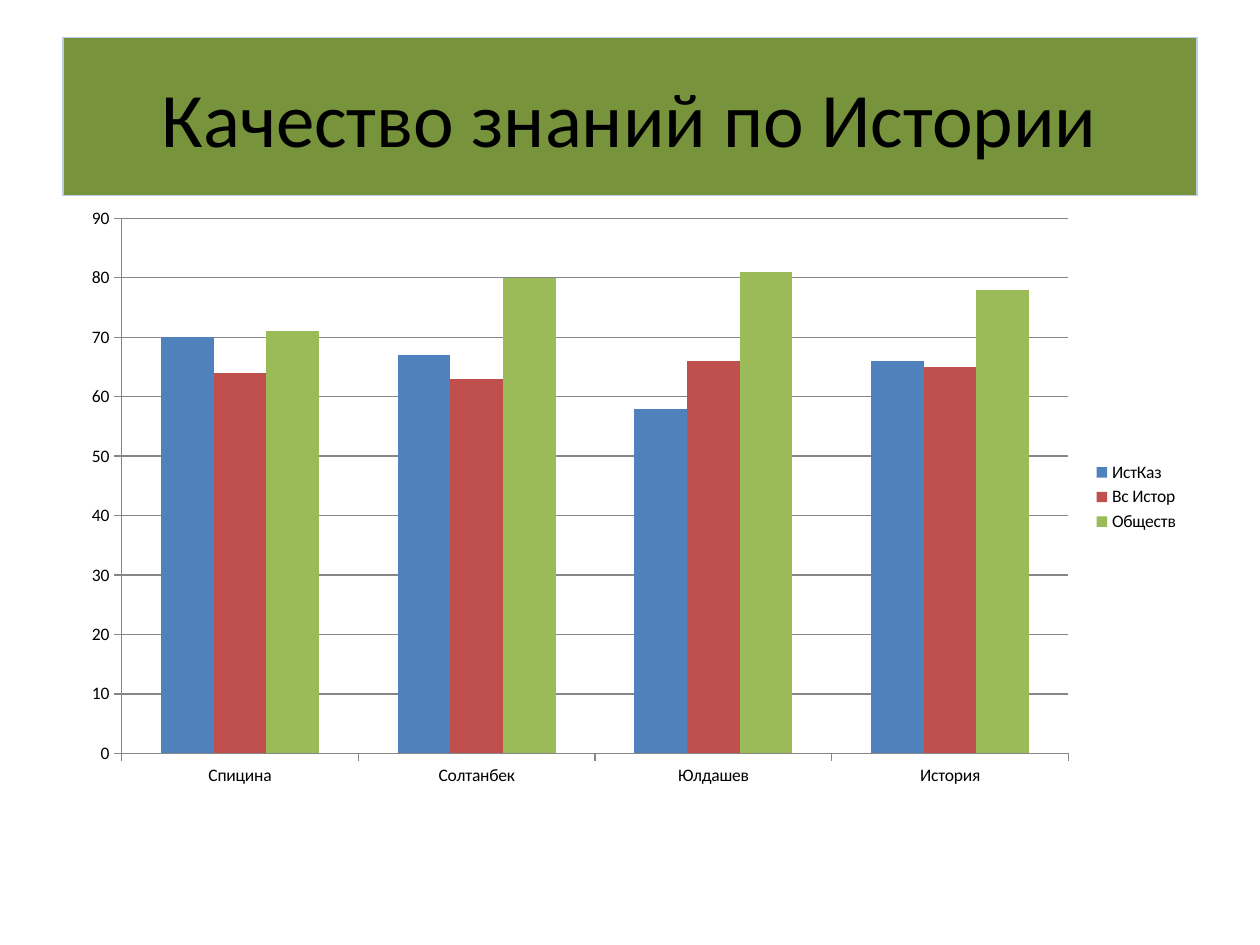
from dataclasses import dataclass

from pptx import Presentation
from pptx.chart.data import CategoryChartData
from pptx.dml.color import RGBColor
from pptx.enum.chart import XL_CHART_TYPE, XL_LEGEND_POSITION, XL_TICK_MARK
from pptx.enum.text import MSO_ANCHOR, PP_ALIGN
from pptx.slide import Slide
from pptx.util import Cm, Pt


@dataclass(frozen=True)
class Theme:
    font: str = "Calibri"
    title_size: Pt = Pt(44)
    chart_size: Pt = Pt(10)
    line_width: Pt = Pt(0.75)
    text: RGBColor = RGBColor(0x00, 0x00, 0x00)
    banner: RGBColor = RGBColor(0x77, 0x93, 0x3C)
    banner_edge: RGBColor = RGBColor(0xB9, 0xCD, 0xE5)
    axis: RGBColor = RGBColor(0x86, 0x86, 0x86)


@dataclass(frozen=True)
class Subject:
    name: str
    scores: tuple[int, ...]
    color: RGBColor


THEME = Theme()
TEACHERS = ("Cпицина", "Солтанбек", "Юлдашев", "История")
SUBJECTS = (
    Subject("ИстКаз", (70, 67, 58, 66), RGBColor(0x4F, 0x81, 0xBD)),
    Subject("Вс Истор", (64, 63, 66, 65), RGBColor(0xC0, 0x50, 0x4D)),
    Subject("Обществ", (71, 80, 81, 78), RGBColor(0x9B, 0xBB, 0x59)),
)


def style_font(font, size: Pt) -> None:
    font.name = THEME.font
    font.size = size
    font.bold = False
    font.color.rgb = THEME.text


def style_line(line, color: RGBColor) -> None:
    line.color.rgb = color
    line.width = THEME.line_width


def fill_banner(slide: Slide, heading: str) -> None:
    banner = slide.shapes.title
    banner.left, banner.top = Cm(1.27), Cm(0.76)
    banner.width, banner.height = Cm(22.86), Cm(3.18)
    banner.fill.solid()
    banner.fill.fore_color.rgb = THEME.banner
    style_line(banner.line, THEME.banner_edge)
    banner.text_frame.text = heading
    banner.text_frame.vertical_anchor = MSO_ANCHOR.MIDDLE
    paragraph = banner.text_frame.paragraphs[0]
    paragraph.alignment = PP_ALIGN.CENTER
    style_font(paragraph.font, THEME.title_size)


def add_scores_chart(slide: Slide, subjects: tuple[Subject, ...]) -> None:
    scores = CategoryChartData()
    scores.categories = TEACHERS
    for subject in subjects:
        scores.add_series(subject.name, subject.scores)
    chart = slide.shapes.add_chart(
        XL_CHART_TYPE.COLUMN_CLUSTERED,
        Cm(1.4), Cm(3.96), Cm(22.63), Cm(12.12), scores,
    ).chart
    style_font(chart.font, THEME.chart_size)
    chart.has_title = False
    chart.has_legend = True
    chart.legend.position = XL_LEGEND_POSITION.RIGHT
    chart.legend.include_in_layout = False

    for axis in (chart.category_axis, chart.value_axis):
        axis.major_tick_mark = XL_TICK_MARK.OUTSIDE
        axis.minor_tick_mark = XL_TICK_MARK.NONE
        style_line(axis.format.line, THEME.axis)
    score_axis = chart.value_axis
    score_axis.minimum_scale, score_axis.maximum_scale = 0, 90
    score_axis.major_unit = 10
    score_axis.has_major_gridlines = True
    style_line(score_axis.major_gridlines.format.line, THEME.axis)

    columns = chart.plots[0]
    columns.vary_by_categories = False
    columns.gap_width = 150
    columns.overlap = 0
    for series, subject in zip(columns.series, subjects):
        series.format.fill.solid()
        series.format.fill.fore_color.rgb = subject.color


def main() -> None:
    presentation = Presentation()
    presentation.slide_width, presentation.slide_height = Cm(25.4), Cm(19.05)
    slide = presentation.slides.add_slide(presentation.slide_layouts[5])
    fill_banner(slide, "Качество знаний по Истории")
    add_scores_chart(slide, SUBJECTS)
    presentation.save("out.pptx")


if __name__ == "__main__":
    main()
